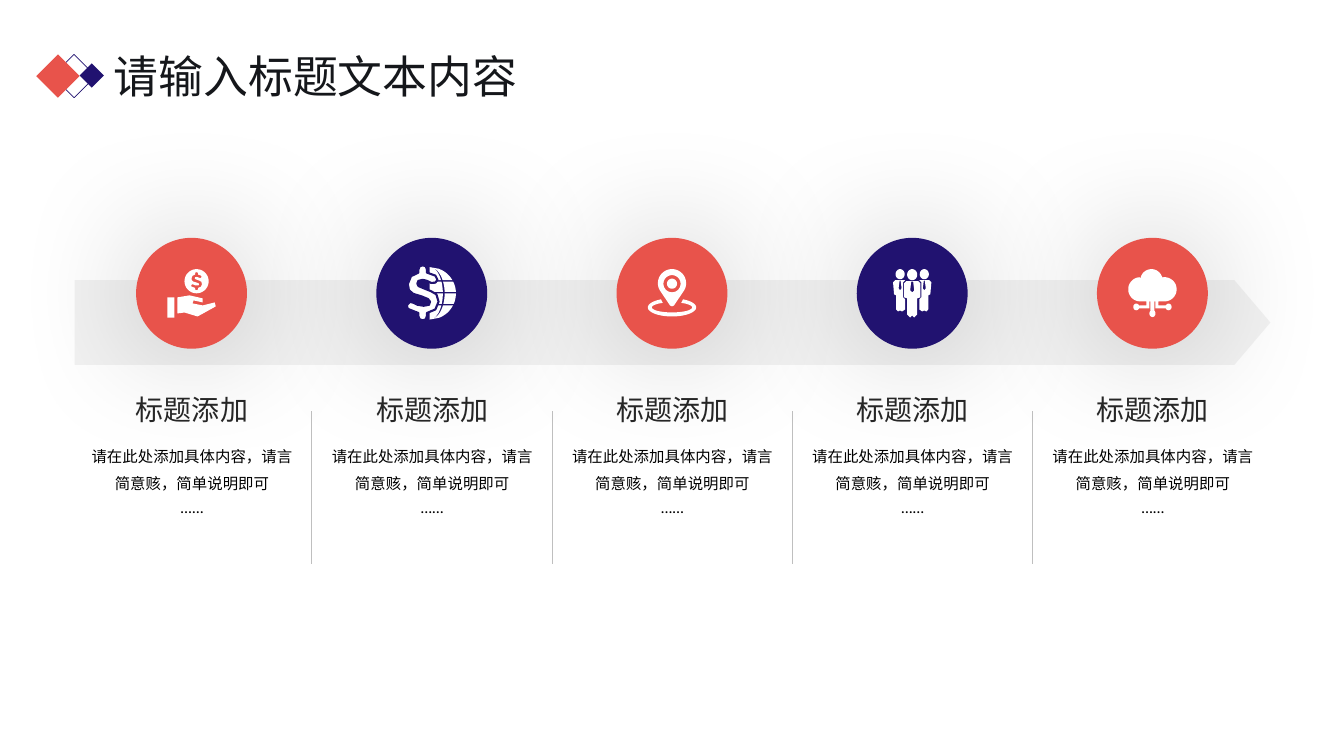
from math import cos, radians, sin, sqrt

from lxml.etree import SubElement
from pptx import Presentation
from pptx.dml.color import RGBColor
from pptx.enum.shapes import MSO_CONNECTOR, MSO_SHAPE
from pptx.enum.text import MSO_ANCHOR, MSO_AUTO_SIZE, PP_ALIGN
from pptx.oxml import parse_xml
from pptx.oxml.ns import nsdecls, qn
from pptx.util import Inches, Pt

RED = RGBColor(0xE8, 0x53, 0x4B)
NAVY = RGBColor(0x21, 0x12, 0x70)
WHITE = RGBColor(0xFF, 0xFF, 0xFF)
BLACK = RGBColor(0, 0, 0)
BAND_GRAY = RGBColor(0xF2, 0xF2, 0xF2)
RULE_GRAY = RGBColor(0xBF, 0xBF, 0xBF)
HEADING_GRAY = RGBColor(0x26, 0x26, 0x26)
TITLE_INK = RGBColor(0x15, 0x17, 0x1B)
FONT = "Lato"
STEP = 2.3825  # distance between columns


def arc(x, y, rx, ry, start=0, end=360):
    """Points along an ellipse, clockwise from the right, in degrees."""
    angles = [radians(start + (end - start) * i / 36) for i in range(37)]
    return [(x + rx * cos(angle), y + ry * sin(angle)) for angle in angles]


def add_text(left, top, width, height, lines, size, color, align, spacing=(1,)):
    """A text box with one paragraph for each line."""
    box = slide.shapes.add_textbox(Inches(left), Inches(top), Inches(width), Inches(height))
    frame = box.text_frame
    frame.word_wrap = True
    frame.text = "\n".join(lines)
    for paragraph, line_spacing in zip(frame.paragraphs, spacing):
        paragraph.alignment = align
        paragraph.line_spacing = line_spacing
        paragraph.font.size = Pt(size)
        paragraph.font.name = FONT
        paragraph.font.color.rgb = color
    return frame


presentation = Presentation()
presentation.slide_width = Inches(13.33)
presentation.slide_height = Inches(7.5)
slide = presentation.slides.add_slide(presentation.slide_layouts[6])

# Title and its diamonds
title = add_text(1.03, 0.43, 4.28, 0.64, ["请输入标题文本内容"], 32, TITLE_INK, PP_ALIGN.JUSTIFY)
title.auto_size = MSO_AUTO_SIZE.SHAPE_TO_FIT_TEXT
for left, top, size, fill in [(0.52, 0.54, 0.43, None), (0.36, 0.54, 0.43, RED),
                              (0.79, 0.63, 0.24, NAVY)]:
    diamond = slide.shapes.add_shape(
        MSO_SHAPE.DIAMOND, Inches(left), Inches(top), Inches(size), Inches(size))
    diamond.shadow.inherit = False
    if fill is None:
        diamond.fill.background()
        diamond.line.color.rgb = NAVY
        diamond.line.width = Pt(0.5)
    else:
        diamond.fill.solid()
        diamond.fill.fore_color.rgb = fill
        diamond.line.fill.background()

# Arrow band behind the circles
band = slide.shapes.add_shape(
    MSO_SHAPE.PENTAGON, Inches(0.74), Inches(2.78), Inches(11.86), Inches(0.84))
band.adjustments[0] = 0.425
band.shadow.inherit = False
band.fill.solid()
band.fill.fore_color.rgb = BAND_GRAY
band.line.fill.background()

# Icon outlines, in hundredths of an inch from the circle centre
dollar = [(3, -3.5), (-4, -6.5), (-5, -9), (-4, -11.5), (0, -12.5), (4, -11.5), (8, -9.5),
          (12, -9.8), (14, -12.5), (12, -16.5), (4, -19.5), (4, -22.5), (3, -25.5), (0, -26.5),
          (-3, -25.5), (-4, -22.5), (-4, -19.5), (-11, -16), (-14, -8.5), (-13, -2.5),
          (-9, 1), (-1, 3.5), (5, 6), (7, 8.5), (6, 11.5), (1, 12.5), (-5, 11.5), (-9, 9.5),
          (-12, 8.8), (-15, 12), (-14, 15.5), (-4, 19.5), (-4, 22.5), (-3, 25.5), (0, 26.5),
          (3, 25.5), (4, 22.5), (4, 19.5), (12, 16), (15, 8.5), (13, 1.5), (8, -1.5)]

hand_and_coin = [
    [(-24, 4), (-17, 4), (-17, 24), (-24, 24)],
    [(-2, 2), (11, 5), (11, 9), (2, 7), (1, 10), (11, 12), (23, 9), (24, 13), (6, 23),
     (-7, 19), (-14, 20), (-14, 4)],
    arc(5, -12, 12, 12),
    [(5 + x * 0.36, -12 + y * 0.34) for x, y in dollar],
]

globe = []
for top, bottom in [(-26, -13), (-11.5, -1.5), (0, 10.5), (12, 26)]:
    rows = [top + (bottom - top) * i / 8 for i in range(9)]
    for inner, outer in [(0, 0.5), (0.57, 1)]:
        side = [(sqrt(26 ** 2 - y ** 2), y) for y in rows]
        globe.append([(-2 + x * inner, y) for x, y in side]
                     + [(-2 + x * outer, y) for x, y in reversed(side)])
globe_dollar = [[(-9 + x * 1.05, y * 1.03 - 0.5) for x, y in dollar]]

map_pin = [
    arc(0, 14, 24, 9, -63, 243) + arc(0, 14, 20, 5, 243, -63),
    arc(0, -10, 14, 14, 150, 390) + [(2, 12), (0, 13), (-2, 12)],
    arc(0, -9.5, 8.5, 8.5),
    arc(0, -9.5, 5, 5),
]

team = [
    arc(0, -18.5, 5, 5.5),
    [(-6, -12), (6, -12), (8, -10), (8, 4), (5, 5), (5, 21), (2, 24), (0, 22), (-2, 24),
     (-5, 21), (-5, 5), (-8, 4), (-8, -10)],
    [(-1, -11.5), (1, -11.5), (2, -3), (0, -1), (-2, -3)],
]
cloud = [
    arc(-12, -4, 12, 12, 90, 265) + arc(-1, -13, 11, 11, 190, 330)
    + arc(12, -4, 12, 12, -100, 90),
    [(-2, 8), (2, 8), (2, 17), (-2, 17)],
    arc(0, 20, 3, 3.5),
]
for mirror in (-1, 1):
    colleague = [
        arc(12, -19, 4.5, 5),
        [(7, -13), (17, -13), (19, -11), (18, 1), (16, 2), (16, 16), (14, 18), (12, 17),
         (10, 18), (7, 16), (7, 6), (9, 4), (9, -11)],
        [(11.5, -12.5), (12.5, -12.5), (13.5, -5), (12, -3), (10.5, -5)],
    ]
    branch = [
        [(3, 8), (6, 8), (6, 12), (13, 12), (13, 15), (3, 15)],
        arc(16, 13.5, 3, 3.3),
    ]
    team += [[(mirror * x, y) for x, y in outline] for outline in colleague]
    cloud += [[(mirror * x, y) for x, y in outline] for outline in branch]

# Columns: circle, icon, heading, body text and divider
columns = [(RED, [hand_and_coin]), (NAVY, [globe, globe_dollar]), (RED, [map_pin]),
           (NAVY, [team]), (RED, [cloud])]
for index, (color, icon_layers) in enumerate(columns):
    offset = index * STEP
    circle = slide.shapes.add_shape(
        MSO_SHAPE.OVAL, Inches(1.35 + offset), Inches(2.36), Inches(1.1), Inches(1.1))
    circle.fill.solid()
    circle.fill.fore_color.rgb = color
    circle.line.fill.background()
    circle._element.spPr.append(parse_xml(
        f'<a:effectLst {nsdecls("a")}><a:outerShdw blurRad="{Pt(95)}" dist="0" algn="ctr" '
        'rotWithShape="0"><a:srgbClr val="000000"><a:alpha val="24000"/></a:srgbClr>'
        '</a:outerShdw></a:effectLst>'))

    for outlines in icon_layers:
        builder = None
        for outline in outlines:
            points = [(x * 100, y * 100) for x, y in outline]
            if builder is None:
                builder = slide.shapes.build_freeform(*points[0], scale=Inches(1) / 10000)
            else:
                builder.move_to(*points[0])
            builder.add_line_segments(points[1:], close=True)
        icon = builder.convert_to_shape(Inches(1.9 + offset), Inches(2.91))
        icon.shadow.inherit = False
        icon.fill.solid()
        icon.fill.fore_color.rgb = WHITE
        if outlines is globe_dollar:
            icon.line.color.rgb = NAVY
            icon.line.width = Pt(1.5)
        else:
            icon.line.fill.background()

    add_text(0.74 + offset, 4.29, 2.33, 1.11,
             ["请在此处添加具体内容，请言简意赅，简单说明即可", "……"],
             11, BLACK, PP_ALIGN.CENTER, (1.5, 1.3))
    heading = add_text(0.74 + offset, 3.86, 2.33, 0.42, ["标题添加"],
                       20, HEADING_GRAY, PP_ALIGN.CENTER)
    heading.vertical_anchor = MSO_ANCHOR.BOTTOM

    if index < len(columns) - 1:
        x = Inches(3.09 + offset)
        divider = slide.shapes.add_connector(
            MSO_CONNECTOR.STRAIGHT, x, Inches(4.08), x, Inches(5.6))
        divider.line.color.rgb = RULE_GRAY
        divider.line.width = Pt(0.25)
        SubElement(divider._element.spPr, qn("a:effectLst"))

presentation.save("out.pptx")
